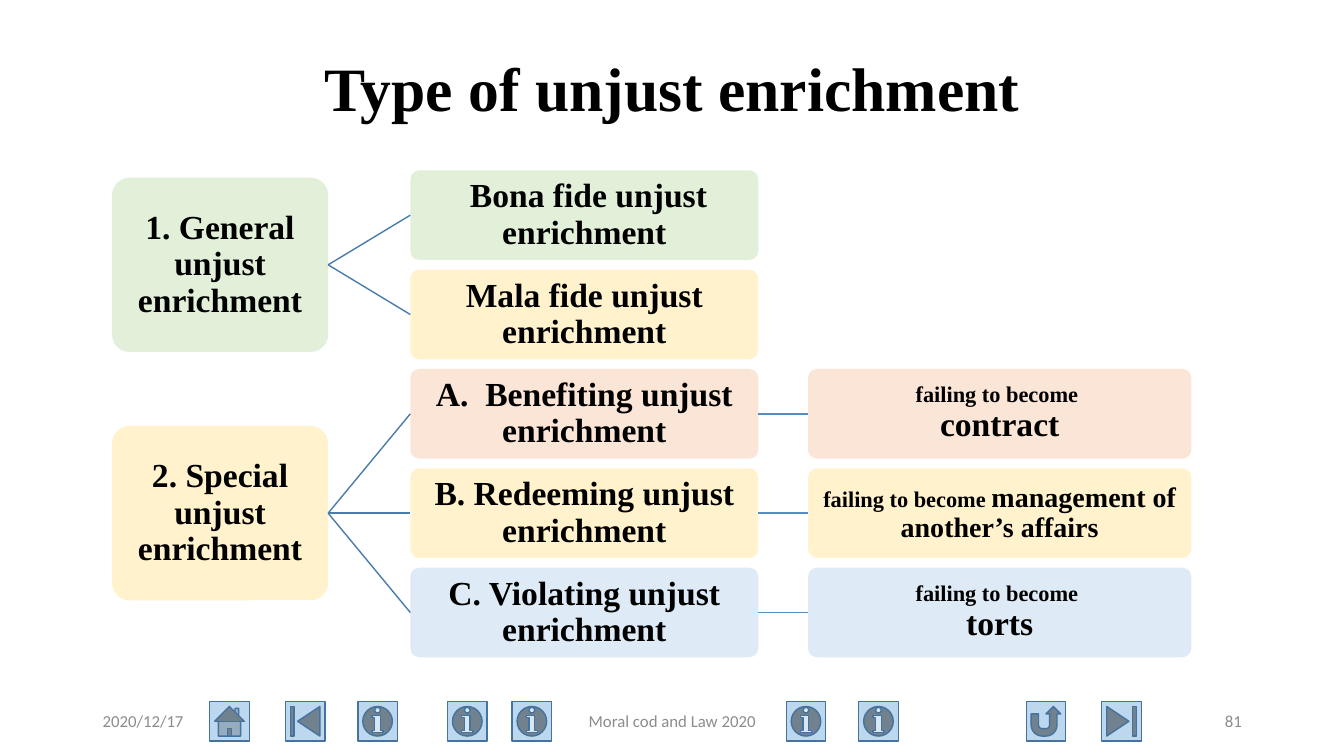
from dataclasses import dataclass

from lxml.etree import SubElement
from pptx import Presentation
from pptx.dml.color import RGBColor as Rgb
from pptx.enum.shapes import MSO_CONNECTOR as Link, MSO_SHAPE as Form
from pptx.enum.text import MSO_ANCHOR as Anchor, PP_ALIGN as Align
from pptx.oxml.ns import qn
from pptx.util import Pt


@dataclass(frozen=True)
class Theme:
    serif: str = "Times New Roman"
    sans: str = "Calibri"
    ink: str = "000000"
    muted: str = "8C8C8C"
    green: str = "E2F0D9"
    yellow: str = "FFF2CC"
    orange: str = "FBE5D6"
    blue: str = "DEEBF7"
    button: str = "BDD7EE"
    button_edge: str = "43739E"
    branch: str = "497CAB"
    sub_branch: str = "538DC1"
    title: int = 44
    body: int = 24
    medium: int = 20
    small: int = 16
    footer: int = 12


class SlideBuilder:
    def __init__(self, slide, theme):
        self.shapes = slide.shapes
        self.theme = theme

    def set_text(self, frame, lines, align, font, color, bold, spacing=1.0, margins=None):
        """Each line is a list of (text, size) runs; lines are split by breaks."""
        frame_format = {"word_wrap": True, "vertical_anchor": Anchor.MIDDLE}
        if margins is not None:
            sides = ("left", "right", "top", "bottom")
            frame_format.update({f"margin_{side}": Pt(margins) for side in sides})
        for name, value in frame_format.items():
            setattr(frame, name, value)
        paragraph = frame.paragraphs[0]
        paragraph.alignment = align
        paragraph.line_spacing = spacing
        for index, line in enumerate(lines):
            if index:
                paragraph.add_line_break()
            for words, size in line:
                run = paragraph.add_run()
                run.text = words
                font_format = {"name": font, "size": Pt(size), "bold": bold}
                for name, value in font_format.items():
                    setattr(run.font, name, value)
                run.font.color.rgb = Rgb.from_string(color)

    def text(self, box, words, size, align, font, color, bold=False, spacing=1.0):
        label = self.shapes.add_textbox(*map(Pt, box))
        self.set_text(label.text_frame, [[(words, size)]], align, font, color, bold, spacing)

    def shape(self, form, box, fill, edge=None):
        item = self.shapes.add_shape(form, *map(Pt, box))
        item.shadow.inherit = False
        item.fill.solid()
        item.fill.fore_color.rgb = Rgb.from_string(fill)
        if edge:
            item.line.color.rgb = Rgb.from_string(edge)
            item.line.width = Pt(1)
        else:
            item.line.fill.background()
        return item

    def card(self, box, fill, lines):
        card = self.shape(Form.ROUNDED_RECTANGLE, box, fill)
        card.adjustments[0] = 0.1
        self.set_text(card.text_frame, lines, Align.CENTER, self.theme.serif,
                      self.theme.ink, True, 0.9, 1.2)
        return card

    def connect(self, parent, child, color):
        branch = self.shapes.add_connector(Link.STRAIGHT, 0, 0, 0, 0)
        branch.begin_connect(parent, 3)
        branch.end_connect(child, 1)
        branch.line.color.rgb = Rgb.from_string(color)
        branch.line.width = Pt(1)
        SubElement(branch.element.spPr, qn("a:effectLst"))


# Tree geometry: rows share one pitch, heads are centred on their children
ROW_TOP, ROW_PITCH, ROW_HEIGHT = 121.7, 70.95, 64
HEAD_LEFT, HEAD_WIDTH, HEAD_HEIGHT = 80, 154.4, 124.5
KIND_LEFT, KIND_WIDTH = 293.1, 248.6
RESULT_LEFT, RESULT_WIDTH = 577.2, 273.8
FOOTER_TOP, FOOTER_HEIGHT = 500.5, 28.75
BUTTON_TOP, BUTTON_SIZE = 501.1, 28.2


def draw_tree(builder):
    theme = builder.theme
    failing = ("failing to become ", theme.small)
    # Head, its colour, then kinds: wording, colour, lines of the result card
    groups = [
        ("1. General unjust enrichment", theme.green, [
            (" Bona fide unjust enrichment", theme.green, None),
            ("Mala fide unjust enrichment", theme.yellow, None),
        ]),
        ("2. Special unjust enrichment", theme.yellow, [
            ("A.  Benefiting unjust enrichment", theme.orange,
             [[failing], [("contract", theme.body)]]),
            ("B. Redeeming unjust enrichment", theme.yellow,
             [[failing, ("management of another’s affairs", theme.medium)]]),
            ("C. Violating unjust enrichment", theme.blue,
             [[failing], [("torts", theme.body)]]),
        ]),
    ]
    row = 0
    for head_words, head_fill, kinds in groups:
        middle = ROW_TOP + (row + (len(kinds) - 1) / 2) * ROW_PITCH + ROW_HEIGHT / 2
        head = builder.card((HEAD_LEFT, middle - HEAD_HEIGHT / 2, HEAD_WIDTH, HEAD_HEIGHT),
                            head_fill, [[(head_words, theme.body)]])
        for words, fill, result_lines in kinds:
            top = ROW_TOP + row * ROW_PITCH
            kind = builder.card((KIND_LEFT, top, KIND_WIDTH, ROW_HEIGHT),
                                fill, [[(words, theme.body)]])
            builder.connect(head, kind, theme.branch)
            if result_lines:
                result = builder.card((RESULT_LEFT, top, RESULT_WIDTH, ROW_HEIGHT),
                                      fill, result_lines)
                builder.connect(kind, result, theme.sub_branch)
            row += 1


def draw_footer(builder):
    theme = builder.theme
    # Navigation buttons
    buttons = [
        (Form.ACTION_BUTTON_HOME, (149.8,)),
        (Form.ACTION_BUTTON_BEGINNING, (203.8,)),
        (Form.ACTION_BUTTON_RETURN, (733,)),
        (Form.ACTION_BUTTON_END, (787,)),
        (Form.ACTION_BUTTON_INFORMATION, (255.6, 319.7, 365.8, 561.6, 613.4)),
    ]
    for form, lefts in buttons:
        for left in lefts:
            builder.shape(form, (left, BUTTON_TOP, BUTTON_SIZE, BUTTON_SIZE),
                          theme.button, theme.button_edge)
    # Date, course name and page number
    for left, width, words, align in [
        (66.2, 216, "2020/12/17", Align.LEFT),
        (318.2, 324, "Moral cod and Law 2020", Align.CENTER),
        (678.2, 216, "81", Align.RIGHT),
    ]:
        builder.text((left, FOOTER_TOP, width, FOOTER_HEIGHT), words, theme.footer,
                     align, theme.sans, theme.muted)


def main():
    deck = Presentation()
    deck.slide_width, deck.slide_height = Pt(960), Pt(540)
    theme = Theme()
    builder = SlideBuilder(deck.slides.add_slide(deck.slide_layouts[6]), theme)
    draw_footer(builder)
    # Title
    builder.text((66.2, 28.8, 828, 73.4), "Type of unjust enrichment", theme.title,
                 Align.CENTER, theme.serif, theme.ink, bold=True, spacing=0.9)
    draw_tree(builder)
    deck.save("out.pptx")


if __name__ == "__main__":
    main()
